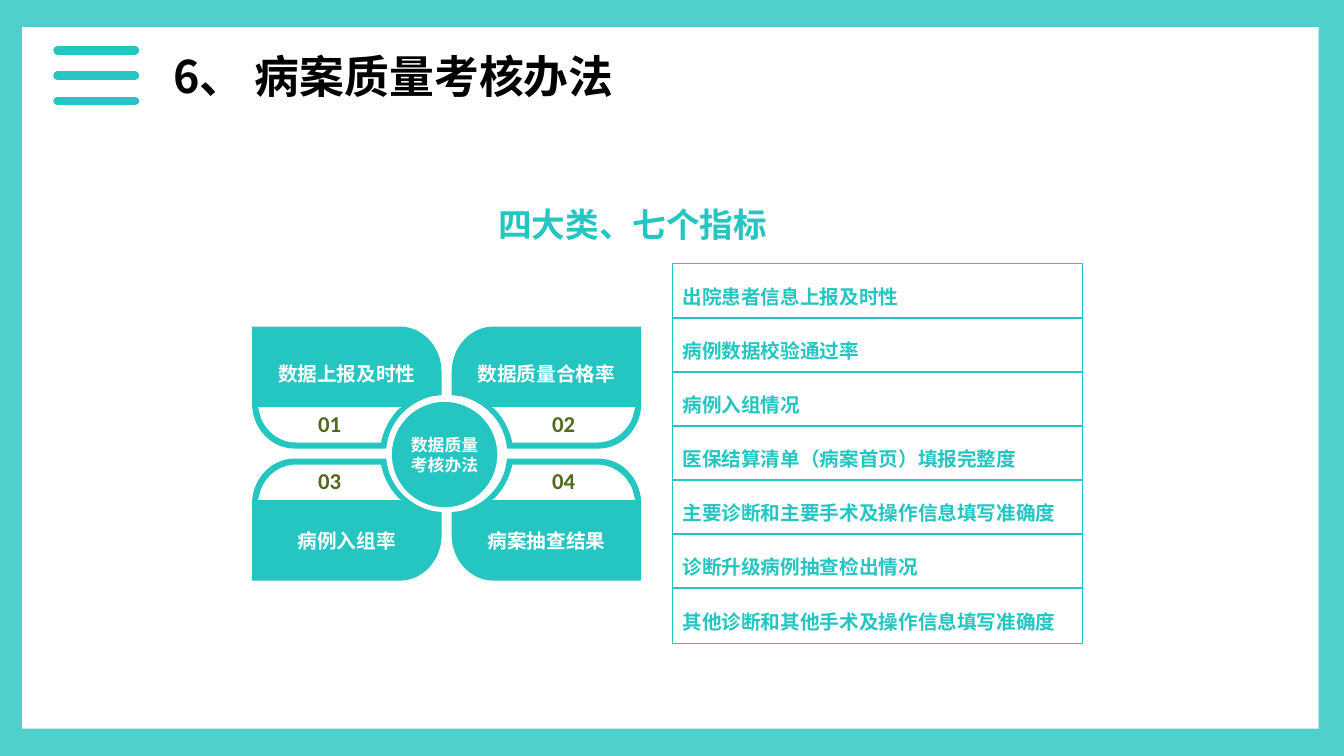
import pptx
import pptx.util
import pptx.dml.color
import pptx.enum.shapes
import pptx.enum.text
import pptx.oxml.ns
from lxml import etree

Inches = pptx.util.Inches
Pt = pptx.util.Pt
SHAPES = pptx.enum.shapes.MSO_SHAPE
ALIGN = pptx.enum.text.PP_ALIGN
ANCHOR = pptx.enum.text.MSO_ANCHOR
qn = pptx.oxml.ns.qn

COLOURS = {"teal": "25C5C1", "white": "FFFFFF", "black": "000000", "olive": "506A1C"}
CHINESE = "Noto Sans CJK SC"
DEFAULT_INSETS = (0.1, 0.05, 0.1, 0.05)
NO_INSETS = (0, 0, 0, 0)

CENTRE_X, CENTRE_Y = 4.43, 4.5
# Upper left outlines: a pair is a corner, a triple of pairs is a cubic curve.
PETAL = [
    (2.5, 3.24), (3.97, 3.24),
    ((4.19, 3.24), (4.38, 3.44), (4.38, 3.69)),
    (4.38, 3.92), (4.29, 3.93),
    ((4.07, 3.98), (3.88, 4.16), (3.84, 4.39)),
    (3.83, 4.45), (2.92, 4.45),
    ((2.69, 4.45), (2.5, 4.25), (2.5, 4)),
]
NUMBER_TAB = [
    (2.56, 4.04), (3.98, 4.04), (3.96, 4.05),
    ((3.87, 4.14), (3.81, 4.25), (3.78, 4.38)),
    (3.78, 4.39), (2.94, 4.39),
    ((2.78, 4.39), (2.65, 4.29), (2.59, 4.15)),
]
CATEGORIES = ["数据上报及时性", "数据质量合格率", "病例入组率", "病案抽查结果"]
INDICATORS = [
    "出院患者信息上报及时性",
    "病例数据校验通过率",
    "病例入组情况",
    "医保结算清单（病案首页）填报完整度",
    "主要诊断和主要手术及操作信息填写准确度",
    "诊断升级病例抽查检出情况",
    "其他诊断和其他手术及操作信息填写准确度",
]


def flatten(outline, steps=16):
    """Turn corners and cubic curves into a plain list of points."""
    points = []
    for part in outline:
        if len(part) == 2:
            points.append(part)
            continue
        controls = (points[-1], *part)
        for step in range(1, steps + 1):
            t = step / steps
            weights = ((1 - t) ** 3, 3 * t * (1 - t) ** 2, 3 * t * t * (1 - t), t ** 3)
            points.append(tuple(
                sum(weight * control[axis] for weight, control in zip(weights, controls))
                for axis in (0, 1)))
    return points


def mirror(points, right, lower):
    """Reflect upper left points into another quadrant."""
    return [(2 * CENTRE_X - x if right else x, 2 * CENTRE_Y - y if lower else y)
            for x, y in points]


class SlideBuilder:
    def __init__(self, slide):
        self.slide = slide
        self.shapes = slide.shapes

    def colour(self, name):
        return pptx.dml.color.RGBColor.from_string(COLOURS[name])

    def paint(self, shape, fill=None, line=None, width=1.0):
        shape.shadow.inherit = False
        if fill:
            shape.fill.solid()
            shape.fill.fore_color.rgb = self.colour(fill)
        else:
            shape.fill.background()
        if line:
            shape.line.color.rgb = self.colour(line)
            shape.line.width = Pt(width)
        else:
            shape.line.fill.background()

    def set_text(self, shape, lines, size, colour, align=ALIGN.CENTER, font=CHINESE,
                 spacing=1.0, insets=DEFAULT_INSETS, anchor=ANCHOR.MIDDLE):
        frame = shape.text_frame
        frame.word_wrap = True
        frame.auto_size = pptx.enum.text.MSO_AUTO_SIZE.NONE
        frame.vertical_anchor = anchor
        (frame.margin_left, frame.margin_top,
         frame.margin_right, frame.margin_bottom) = map(Inches, insets)
        frame.text = "\n".join(lines)
        for para in frame.paragraphs:
            para.alignment = align
            para.line_spacing = spacing
            para.space_before = Pt(0)
            para.font.name = font
            para.font.size = Pt(size)
            para.font.bold = True
            para.font.color.rgb = self.colour(colour)
            properties = para._p.pPr.find(qn("a:defRPr"))
            etree.SubElement(properties, qn("a:ea"), typeface=font)

    def box(self, kind, left, top, width, height, fill=None, line=None, line_width=1.0):
        shape = self.shapes.add_shape(
            kind, Inches(left), Inches(top), Inches(width), Inches(height))
        self.paint(shape, fill, line, line_width)
        return shape

    def band(self, top, height):
        shape = self.box(SHAPES.RECTANGLE, 0, top, 13.33, height, "teal")
        colour = shape._element.spPr.find(qn("a:solidFill"))[0]
        etree.SubElement(colour, qn("a:alpha"), val="80000")

    def outline(self, points, fill):
        corners = [(Inches(x), Inches(y)) for x, y in points]
        builder = self.shapes.build_freeform(*corners[0])
        builder.add_line_segments(corners[1:], close=True)
        shape = builder.convert_to_shape()
        self.paint(shape, fill)
        return shape

    def text_box(self, left, top, width, height, text, size, colour, **style):
        box = self.shapes.add_textbox(
            Inches(left), Inches(top), Inches(width), Inches(height))
        self.set_text(box, [text], size, colour, **style)

    def title(self, left, top, width, height, text):
        title = self.shapes.title
        title.left, title.top = Inches(left), Inches(top)
        title.width, title.height = Inches(width), Inches(height)
        self.set_text(title, [text], 32, "black", align=ALIGN.LEFT,
                      spacing=Pt(42), anchor=ANCHOR.TOP)
        self.shapes._spTree.append(title._element)  # bring above the frame

    def menu_bar(self, left, right, y):
        bar = self.shapes.add_connector(
            pptx.enum.shapes.MSO_CONNECTOR.STRAIGHT,
            Inches(left), Inches(y), Inches(right), Inches(y))
        bar.line.color.rgb = self.colour("teal")
        bar.line.width = Pt(6)
        properties = bar._element.spPr
        properties.find(qn("a:ln")).set("cap", "rnd")
        etree.SubElement(properties, qn("a:effectLst"))


def main():
    deck = pptx.Presentation()
    deck.slide_width, deck.slide_height = Inches(13.33), Inches(7.5)
    page = SlideBuilder(deck.slides.add_slide(deck.slide_layouts[5]))

    for top in (0, 3.75):
        page.band(top, 3.75)
    page.box(SHAPES.RECTANGLE, 0.22, 0.27, 12.86, 6.96, "white")

    petal, number_tab = flatten(PETAL), flatten(NUMBER_TAB)
    for index, category in enumerate(CATEGORIES):
        lower, right = divmod(index, 2)
        insets = (0.1, 0.39, 0.1, 0.05) if lower else (0.1, 0.05, 0.1, 0.39)
        shape = page.outline(mirror(petal, right, lower), "teal")
        page.set_text(shape, [category], 14, "white", spacing=1.3, insets=insets)
        shape = page.outline(mirror(number_tab, right, lower), "white")
        page.set_text(shape, [f"{index + 1:02}"], 16.2, "olive", font="Calibri", spacing=0.9)

    hub = page.box(SHAPES.OVAL, 3.88, 3.98, 1.06, 1.06, "teal", "white")
    page.set_text(hub, ["数据质量", "考核办法"], 12, "white", insets=NO_INSETS)

    first_top, last_top = 2.61, 5.83
    step = (last_top - first_top) / (len(INDICATORS) - 1)
    for row, indicator in enumerate(INDICATORS):
        box = page.box(SHAPES.RECTANGLE, 6.67, first_top + row * step, 4.07, 0.55,
                       line="teal", line_width=0.75)
        page.set_text(box, [indicator], 14, "teal", align=ALIGN.LEFT, spacing=1.5)

    page.text_box(4.16, 1.9, 4.23, 0.44, "四大类、七个指标", 24, "teal",
                  spacing=1.3, insets=NO_INSETS, anchor=ANCHOR.TOP)
    page.title(1.62, 0.38, 9.32, 0.64, "6、 病案质量考核办法")
    for y in (0.5, 0.75, 1):
        page.menu_bar(0.57, 1.34, y)

    deck.save("out.pptx")


if __name__ == "__main__":
    main()
